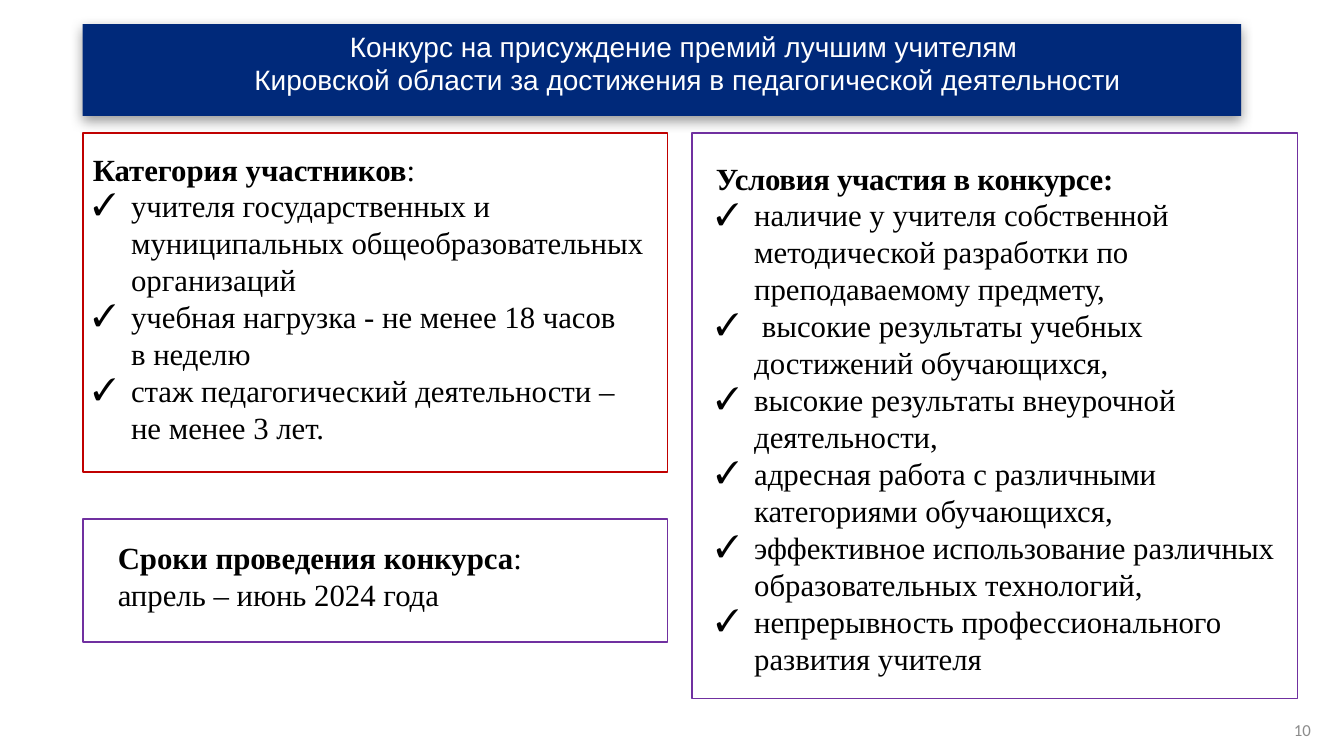
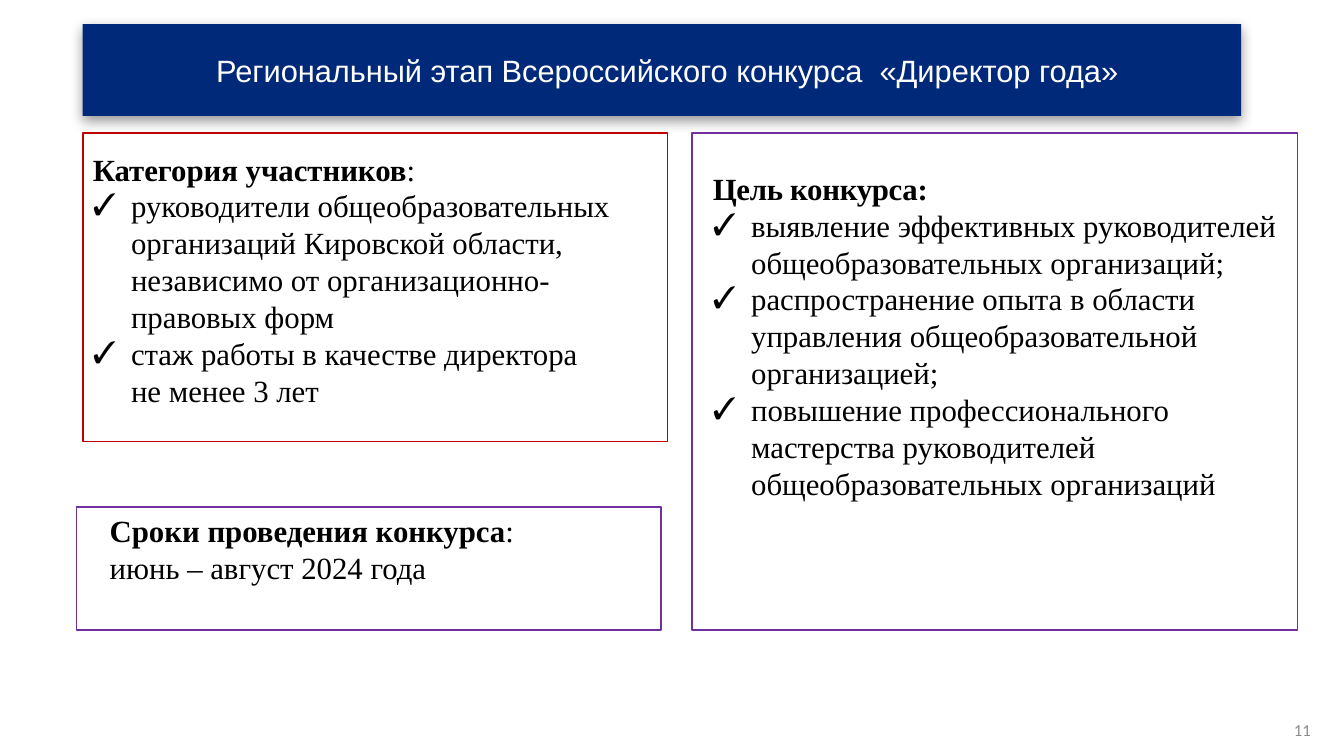
"""Builds two slides that describe contests for teachers and school directors."""
from dataclasses import dataclass
from typing import Any

from lxml.etree import SubElement
from pptx import Presentation
from pptx.dml.color import RGBColor
from pptx.enum.shapes import MSO_SHAPE as Preset
from pptx.enum.text import MSO_ANCHOR as Anchor, MSO_AUTO_SIZE as AutoSize, PP_ALIGN as Align
from pptx.oxml.ns import qn
from pptx.util import Inches, Pt

NAVY = RGBColor(0x00, 0x29, 0x7A)
RED = RGBColor(0xC0, 0x00, 0x00)
PURPLE = RGBColor(0x70, 0x30, 0xA0)
GRAY = RGBColor(0x8C, 0x8C, 0x8C)
BLACK = RGBColor(0x00, 0x00, 0x00)
WHITE = RGBColor(0xFF, 0xFF, 0xFF)

TWO_CONTENT_LAYOUT = 3
BAND = (0.82, 0.24, 11.49, 0.91)
NUMBER_BOX = (10.1, 7.04, 3, 0.4)
INDENT = Inches(0.38)
BODY_FONT = {"name": "Times New Roman", "size": Pt(22), "bold": False}
HEADING_FONT = {**BODY_FONT, "bold": True}
NUMBER_FONT = {"name": "Calibri", "size": Pt(12)}
FRAME_FORMAT = {
    "word_wrap": True, "auto_size": AutoSize.NONE, "vertical_anchor": Anchor.TOP,
    "margin_left": Inches(0.1), "margin_right": Inches(0.1),
    "margin_top": Inches(0.05), "margin_bottom": Inches(0.05),
}
PARAGRAPH_FORMAT = {"space_before": Pt(0), "space_after": Pt(0), "line_spacing": 1.0}

Box = tuple[float, float, float, float]


@dataclass(frozen=True)
class Panel:
    """An outlined panel with a bold heading, its ending and checked items."""
    outline: Box
    color: RGBColor
    text_box: Box
    heading: str
    ending: str = ""
    items: tuple[str, ...] = ()
    spacing: int = 0


@dataclass(frozen=True)
class Contest:
    """The content of one contest slide."""
    number: int
    title: str
    title_size: int
    title_box: Box
    participants: Panel
    terms: Panel
    schedule: Panel


CONTESTS = (
    Contest(
        10,
        "Конкурс на присуждение премий лучшим учителям \n"
        "Кировской области за достижения в педагогической деятельности",
        20, (1.66, 0.24, 10.32, 0.77),
        Panel((0.82, 1.32, 5.8, 3.36), RED, (0.82, 1.44, 5.8, 3.06),
              "Категория участников", ":", (
                  "учителя государственных и муниципальных общеобразовательных организаций",
                  "учебная нагрузка - не менее 18 часов \nв неделю",
                  "стаж педагогический деятельности – \nне менее 3 лет.")),
        Panel((6.86, 1.32, 6.01, 5.61), PURPLE, (7, 1.53, 5.79, 5.28),
              "Условия участия в конкурсе:", "", (
                  "наличие у учителя собственной методической разработки "
                  "по преподаваемому предмету,",
                  " высокие результаты учебных достижений обучающихся,",
                  "высокие результаты внеурочной деятельности,",
                  "адресная работа с различными категориями обучающихся,",
                  "эффективное использование различных образовательных технологий,",
                  "непрерывность профессионального развития учителя"), -20),
        Panel((0.82, 5.15, 5.8, 1.22), PURPLE, (1.07, 5.3, 5.07, 0.84),
              "Сроки проведения конкурса", ": \nапрель – июнь 2024 года"),
    ),
    Contest(
        11,
        "Региональный этап Всероссийского конкурса  «Директор года»",
        22, (1.46, 0.46, 10.32, 0.47),
        Panel((0.82, 1.32, 5.8, 3.06), RED, (0.82, 1.44, 5.8, 2.69),
              "Категория участников", ":", (
                  "руководители общеобразовательных организаций Кировской области, "
                  "независимо от организационно-правовых форм",
                  "стаж работы в качестве директора \nне менее 3 лет")),
        Panel((6.86, 1.32, 6.01, 4.93), PURPLE, (6.97, 1.63, 5.79, 3.8),
              "Цель конкурса:", "", (
                  "выявление эффективных руководителей общеобразовательных организаций;",
                  "распространение опыта в области управления "
                  "общеобразовательной организацией;",
                  "повышение профессионального мастерства руководителей "
                  "общеобразовательных организаций"), -20),
        Panel((0.76, 5.03, 5.8, 1.22), PURPLE, (0.99, 5.03, 5.07, 0.84),
              "Сроки проведения конкурса", ": \nиюнь – август 2024 года"),
    ),
)


def apply_format(target: Any, values: dict[str, Any]) -> None:
    """Set each named attribute of the target."""
    for name, value in values.items():
        setattr(target, name, value)


def place(shape: Any, box: Box) -> None:
    """Move and size a shape by a box in inches."""
    apply_format(shape, dict(zip(("left", "top", "width", "height"), map(Inches, box))))


def add_text(paragraph: Any, text: str, font: dict[str, Any], color: RGBColor,
             spacing: int = 0) -> None:
    """Append formatted text, with a line break at each newline."""
    for index, line in enumerate(text.split("\n")):
        if index:
            paragraph.add_line_break()
            line_break = paragraph._p.findall(qn("a:br"))[-1]
            SubElement(line_break, qn("a:rPr"), sz=str(int(font["size"].pt * 100)))
        run = paragraph.add_run()
        run.text = line
        apply_format(run.font, font)
        run.font.color.rgb = color
        if spacing:
            run._r.get_or_add_rPr().set("spc", str(spacing))


def set_bullet(paragraph: Any, checked: bool) -> None:
    """Give a paragraph a check mark with a hanging indent, or neither."""
    properties = paragraph._p.get_or_add_pPr()
    properties.set("marL", str(INDENT if checked else 0))
    properties.set("indent", str(-INDENT if checked else 0))
    if checked:
        SubElement(properties, qn("a:buFont"), typeface="Times New Roman")
        SubElement(properties, qn("a:buChar"), char="✓")
    else:
        SubElement(properties, qn("a:buNone"))


def add_band(slide: Any) -> None:
    """Draw the shadowed title band behind everything else."""
    band = slide.shapes.add_shape(Preset.RECTANGLE, *map(Inches, BAND))
    band.fill.solid()
    band.fill.fore_color.rgb = NAVY
    band.line.fill.background()
    band.shadow.inherit = False
    effects = band._element.spPr.find(qn("a:effectLst"))
    shadow = SubElement(effects, qn("a:outerShdw"), blurRad=str(Pt(9)), dist=str(Pt(3)),
                        dir=str(101 * 60000), algn="t", rotWithShape="0")
    color = SubElement(shadow, qn("a:srgbClr"), val=str(BLACK))
    SubElement(color, qn("a:alpha"), val="40000")
    slide.shapes._spTree.insert(2, band._element)


def add_title(slide: Any, contest: Contest) -> None:
    """Fill the title placeholder over the band."""
    title = slide.shapes.title
    place(title, contest.title_box)
    frame = title.text_frame
    apply_format(frame, FRAME_FORMAT)
    for index, line in enumerate(contest.title.split("\n")):
        paragraph = frame.add_paragraph() if index else frame.paragraphs[0]
        apply_format(paragraph, {**PARAGRAPH_FORMAT, "alignment": Align.CENTER})
        add_text(paragraph, line, {"name": "Arial", "size": Pt(contest.title_size)}, WHITE)


def add_panel(slide: Any, panel: Panel, holder: Any) -> None:
    """Draw a panel outline and write its text in the holder."""
    outline = slide.shapes.add_shape(Preset.RECTANGLE, *map(Inches, panel.outline))
    outline.fill.background()
    outline.line.color.rgb = panel.color
    outline.line.width = Pt(1.25)
    outline.shadow.inherit = False

    place(holder, panel.text_box)
    frame = holder.text_frame
    apply_format(frame, FRAME_FORMAT)
    heading = frame.paragraphs[0]
    apply_format(heading, PARAGRAPH_FORMAT)
    set_bullet(heading, False)
    add_text(heading, panel.heading, HEADING_FONT, BLACK, panel.spacing)
    if panel.ending:
        add_text(heading, panel.ending, BODY_FONT, BLACK)
    for item in panel.items:
        paragraph = frame.add_paragraph()
        apply_format(paragraph, PARAGRAPH_FORMAT)
        set_bullet(paragraph, True)
        add_text(paragraph, item, BODY_FONT, BLACK)


def add_number(slide: Any, number: int) -> None:
    """Write the slide number in the lower right corner."""
    frame = slide.shapes.add_textbox(*map(Inches, NUMBER_BOX)).text_frame
    apply_format(frame, {**FRAME_FORMAT, "vertical_anchor": Anchor.MIDDLE})
    paragraph = frame.paragraphs[0]
    paragraph.alignment = Align.RIGHT
    add_text(paragraph, str(number), NUMBER_FONT, GRAY)


def add_contest(presentation: Any, contest: Contest) -> None:
    """Add the slide of one contest."""
    slide = presentation.slides.add_slide(presentation.slide_layouts[TWO_CONTENT_LAYOUT])
    add_band(slide)
    add_title(slide, contest)
    add_panel(slide, contest.participants, slide.placeholders[1])
    add_panel(slide, contest.terms, slide.placeholders[2])
    schedule_box = slide.shapes.add_textbox(*map(Inches, contest.schedule.text_box))
    add_panel(slide, contest.schedule, schedule_box)
    add_number(slide, contest.number)


def main() -> None:
    """Build and save the presentation."""
    presentation = Presentation()
    apply_format(presentation, {"slide_width": Inches(13.33), "slide_height": Inches(7.5)})
    for contest in CONTESTS:
        add_contest(presentation, contest)
    presentation.save("out.pptx")


if __name__ == "__main__":
    main()
